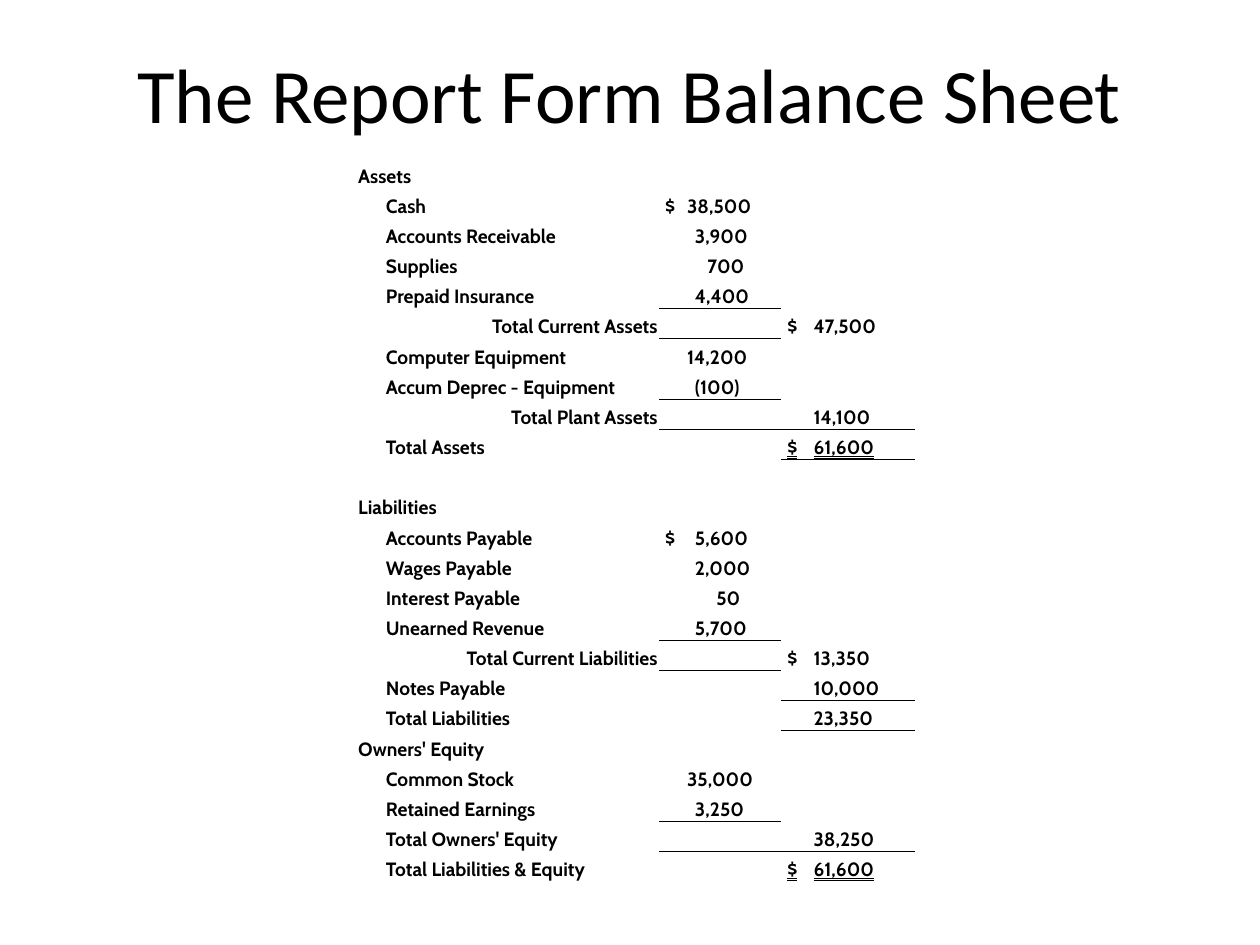
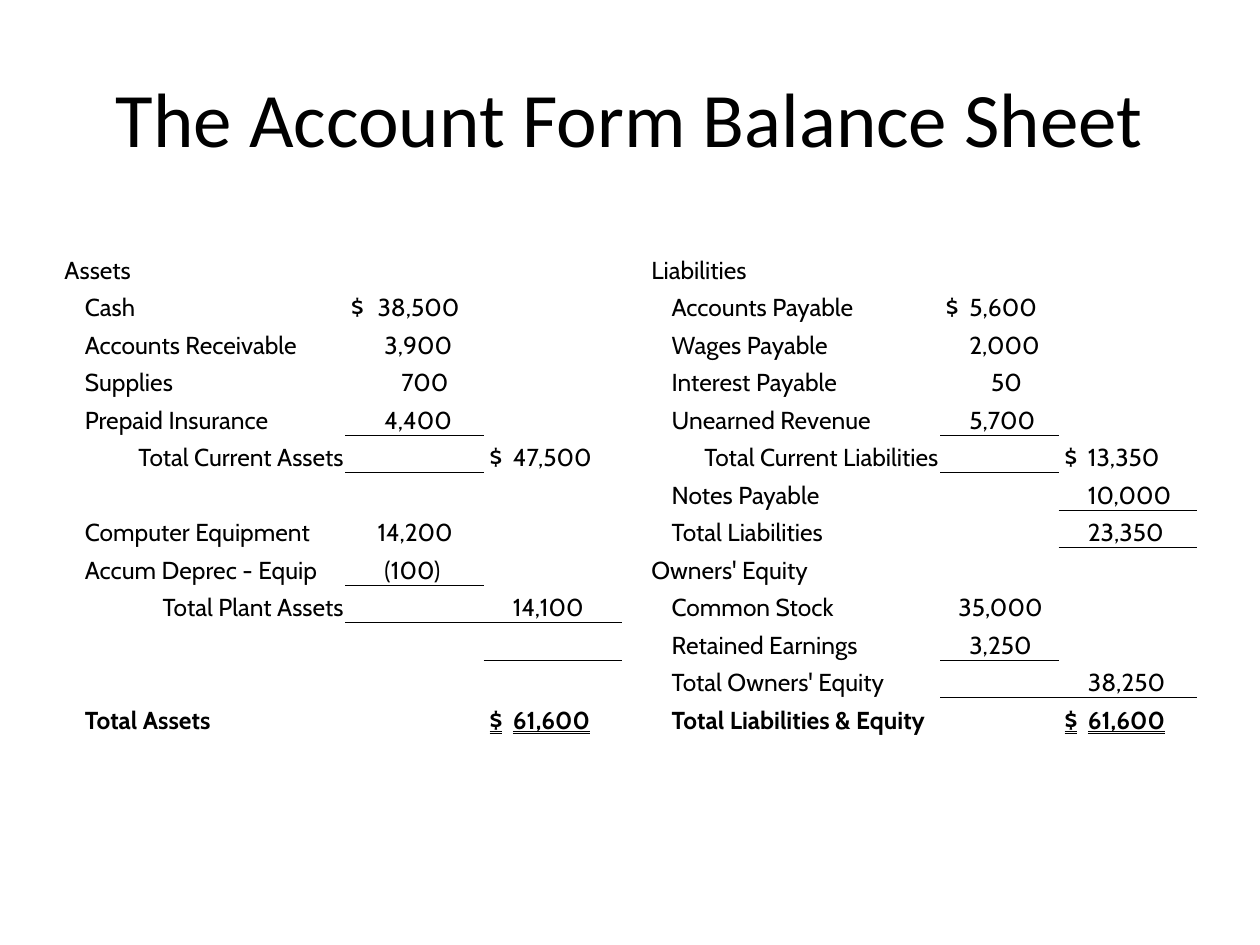
from lxml import etree
from pptx import Presentation
from pptx.dml.color import RGBColor
from pptx.enum.text import MSO_ANCHOR, MSO_UNDERLINE, PP_ALIGN
from pptx.oxml.ns import qn
from pptx.util import Cm, Pt

BLACK = RGBColor(0x00, 0x00, 0x00)
BOTTOM, MIDDLE = MSO_ANCHOR.BOTTOM, MSO_ANCHOR.MIDDLE
CENTER, LEFT, RIGHT = PP_ALIGN.CENTER, PP_ALIGN.LEFT, PP_ALIGN.RIGHT
DOUBLE = MSO_UNDERLINE.DOUBLE_LINE
NO_STYLE = "{2D5ABB26-0587-4C30-8999-92F81FD0307C}"
TITLE_FONT, TABLE_FONT = "Calibri", "Cabin"
HEADING, ITEM, SUBTOTAL, TOTAL, BLANK = range(5)
RULE = "_"
DOLLAR_LEFT = 0.09

# Rows: kind, label, amount, total; a trailing RULE draws a line below.
GAP = (BLANK, "", "", "")
CURRENT_ASSETS = [
    (HEADING, "Assets", "", ""),
    (ITEM, "Cash", "$38,500", ""),
    (ITEM, "Accounts Receivable", "3,900", ""),
    (ITEM, "Supplies", "700", ""),
    (ITEM, "Prepaid Insurance", "4,400_", ""),
    (SUBTOTAL, "Total Current Assets", "", "$47,500"),
]
COMPUTERS = (ITEM, "Computer Equipment", "14,200", "")
PLANT_TOTAL = (SUBTOTAL, "Total Plant Assets", "", "14,100_")
TOTAL_ASSETS = (TOTAL, "Total Assets", "", "$61,600")
LIABILITIES_AND_EQUITY = [
    (HEADING, "Liabilities", "", ""),
    (ITEM, "Accounts Payable", "$5,600", ""),
    (ITEM, "Wages Payable", "2,000", ""),
    (ITEM, "Interest Payable", "50", ""),
    (ITEM, "Unearned Revenue", "5,700_", ""),
    (SUBTOTAL, "Total Current Liabilities", "", "$13,350"),
    (ITEM, "Notes Payable", "", "10,000_"),
    (ITEM, "Total Liabilities", "", "23,350"),
    (HEADING, "Owners' Equity", "", ""),
    (ITEM, "Common Stock", "35,000", ""),
    (ITEM, "Retained Earnings", "3,250_", ""),
    (ITEM, "Total Owners' Equity", "", "38,250_"),
    (TOTAL, "Total Liabilities & Equity", "", "$61,600"),
]
REPORT_ROWS = [
    *CURRENT_ASSETS, COMPUTERS,
    (ITEM, "Accum Deprec - Equipment", "(100)_", ""),
    PLANT_TOTAL, TOTAL_ASSETS, GAP, *LIABILITIES_AND_EQUITY,
]
ACCOUNT_ASSETS = [
    GAP, *CURRENT_ASSETS, GAP, COMPUTERS,
    (ITEM, "Accum Deprec - Equip", "(100)_", ""),
    PLANT_TOTAL, GAP, GAP, TOTAL_ASSETS,
]

# Each block: first column, rows, number offsets in cm by text length per amount column.
SLIDES = [
    {
        "title": "The Report Form Balance Sheet", "title_height": 2.21,
        "left": 7.19, "top": 3.18, "height": 14.61, "size": 11, "bold": True,
        "columns": [0.56, 5.54, 2.46, 2.69],
        "blocks": [(0, REPORT_ROWS, ({6: 0.53, 5: 0.69, 3: 0.94, 2: 1.12}, {6: 0.62}))],
    },
    {
        "title": "The Account Form Balance Sheet", "title_height": 3.18,
        "left": 1.27, "top": 4.24, "height": 10.59, "size": 14, "bold": False,
        "columns": [0.41, 5.28, 2.79, 2.79, 0.56, 0.41, 5.44, 2.39, 2.79],
        "blocks": [
            (0, ACCOUNT_ASSETS, ({6: 0.62, 5: 0.76, 3: 1.1}, {6: 0.56})),
            (5, [GAP, *LIABILITIES_AND_EQUITY],
             ({6: 0.34, 5: 0.56, 2: 1.0}, {6: 0.56})),
        ],
    },
]


def add_title(s, text, height):
    """Place and format the slide title."""
    sp = s.shapes.title
    sp.left, sp.top, sp.width, sp.height = Cm(1.27), Cm(0.76), Cm(22.86), Cm(height)
    tf = sp.text_frame
    tf.text, tf.vertical_anchor = text, MIDDLE
    p = tf.paragraphs[0]
    p.alignment = CENTER
    p.font.name, p.font.size, p.font.color.rgb = TITLE_FONT, Pt(44), BLACK


def add_table(s, left, top, height, columns, row_count, size):
    """Add an unstyled table with even rows and tight cells."""
    frame = s.shapes.add_table(row_count, len(columns), Cm(left), Cm(top),
                               Cm(sum(columns)), Cm(height))
    table = frame.table
    table.first_row = table.horz_banding = False
    table._tbl.tblPr.find(qn("a:tableStyleId")).text = NO_STYLE
    for column, width in zip(table.columns, columns):
        column.width = Cm(width)
    for row in table.rows:
        row.height = Cm(height / row_count)
    for cell in table.iter_cells():
        cell.margin_left = cell.margin_right = cell.margin_top = Cm(0.03)
        cell.margin_bottom = 0
        cell.vertical_anchor = BOTTOM
        cell.fill.background()
        p = cell.text_frame.paragraphs[0]
        etree.SubElement(p._p, qn("a:endParaRPr"), sz=str(size * 100))
    return table


def write(cell, text, size, bold, align=LEFT):
    """Write one line in a cell and return its paragraph."""
    p = cell.text_frame.paragraphs[0]
    p.add_run().text = text
    p.alignment = align
    p.font.name, p.font.size, p.font.bold = TABLE_FONT, Pt(size), bold
    p.font.color.rgb = BLACK
    return p


def write_amount(cell, text, size, bold, offsets):
    """Write an amount, hanging any dollar sign to its left."""
    number = text.lstrip("$")
    dollar = number != text
    p = write(cell, "$\t" + number if dollar else number, size, bold)
    offset = offsets[len(number)]
    pPr = p._p.get_or_add_pPr()
    pPr.set("marL", str(Cm(offset)))
    pPr.set("indent", str(Cm(DOLLAR_LEFT - offset) if dollar else 0))
    return p


def draw_rule(table, row, col):
    """Draw a thin line between a cell and the one below it."""
    for r, edge in ((row, "a:lnB"), (row + 1, "a:lnT")):
        tcPr = table.cell(r, col)._tc.get_or_add_tcPr()
        ln = etree.Element(qn(edge), w=str(Pt(0.5)))
        fill = etree.SubElement(ln, qn("a:solidFill"))
        etree.SubElement(fill, qn("a:srgbClr"), val=str(BLACK))
        tcPr.insert(0, ln)


def fill_block(table, first, rows, offsets, size, all_bold):
    """Fill one statement block, starting at the given column."""
    for i, (kind, label, *amounts) in enumerate(rows):
        bold = all_bold or kind == TOTAL
        if kind == HEADING:
            table.cell(i, first).merge(table.cell(i, first + 1))
        if label:
            col = first if kind == HEADING else first + 1
            write(table.cell(i, col), label, size, bold,
                  RIGHT if kind == SUBTOTAL else LEFT)
        for col, (amount, places) in enumerate(zip(amounts, offsets), first + 2):
            if not amount:
                continue
            p = write_amount(table.cell(i, col), amount.rstrip(RULE), size, bold, places)
            if kind == TOTAL:
                p.font.underline = DOUBLE
            if amount.endswith(RULE):
                draw_rule(table, i, col)


def main():
    """Build both balance sheet slides."""
    prs = Presentation()
    prs.slide_width, prs.slide_height = Cm(25.4), Cm(19.05)
    for sheet in SLIDES:
        s = prs.slides.add_slide(prs.slide_layouts[5])
        add_title(s, sheet["title"], sheet["title_height"])
        row_count = len(sheet["blocks"][0][1])
        table = add_table(s, sheet["left"], sheet["top"], sheet["height"],
                          sheet["columns"], row_count, sheet["size"])
        for first, rows, offsets in sheet["blocks"]:
            fill_block(table, first, rows, offsets, sheet["size"], sheet["bold"])
    prs.save("out.pptx")


if __name__ == "__main__":
    main()
